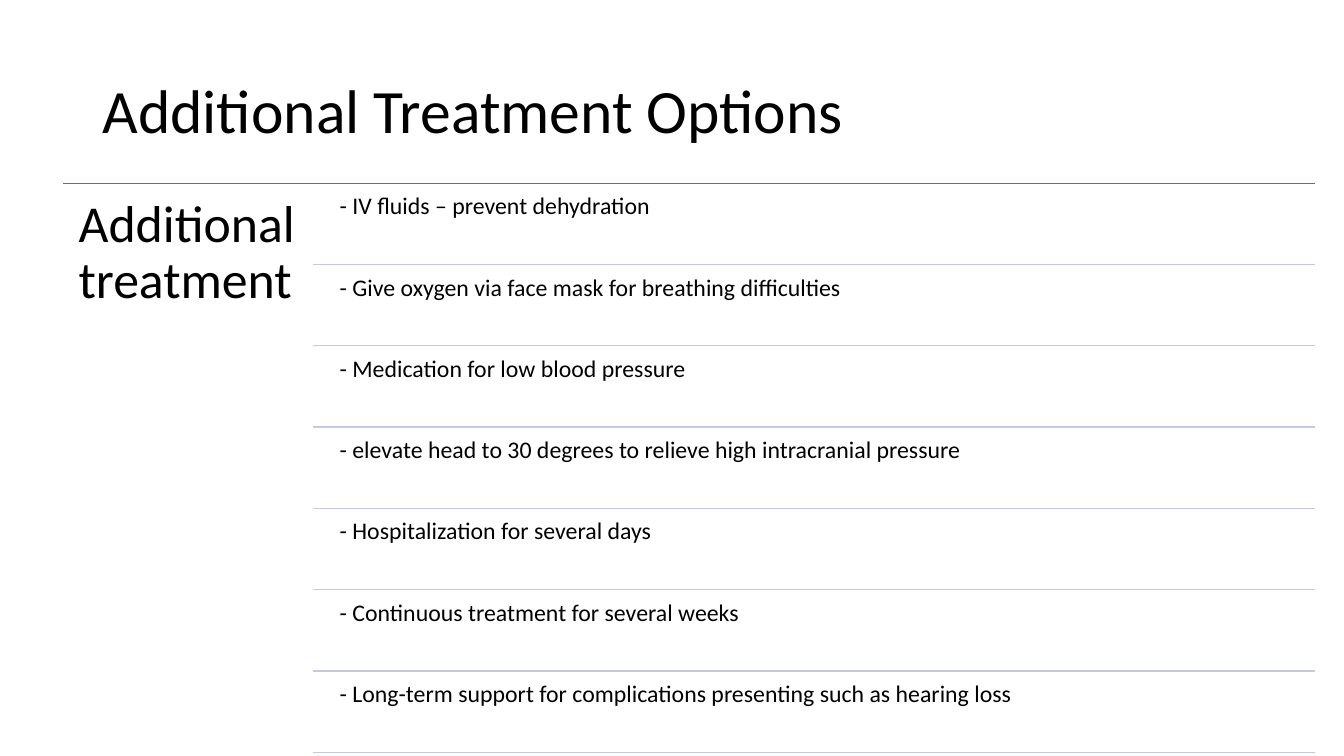
from lxml import etree
from pptx import Presentation
from pptx import util as u
from pptx.dml.color import RGBColor
from pptx.enum import shapes, text
from pptx.oxml.ns import qn

PX = 3048  # EMU per px, 300 px to the inch
COLORS = {"text": "000000", "header": "4472C4", "divider": "C1C9E4"}
FONT = "Calibri"

LEFT, RIGHT, TOP = 189, 3915, 545
ROW_LEFT, ROW_PITCH = 933, 242
TREATMENTS = [
    "IV fluids – prevent dehydration",
    "Give oxygen via face mask for breathing difficulties",
    "Medication for low blood pressure",
    "elevate head to 30 degrees to relieve high intracranial pressure",
    "Hospitalization for several days",
    "Continuous treatment for several weeks",
    "Long-term support for complications presenting such as hearing loss",
]


def px(n):
    return u.Emu(n * PX)


def add_text(s, content, x, y, w, h, size, inset_x, inset_y,
             anchor=text.MSO_ANCHOR.TOP):
    sp = s.shapes.add_textbox(px(x), px(y), px(w), px(h))
    tf = sp.text_frame
    tf.word_wrap = True
    tf.vertical_anchor = anchor
    tf.margin_left = tf.margin_right = px(inset_x)
    tf.margin_top = tf.margin_bottom = px(inset_y)
    p = tf.paragraphs[0]
    p.text = content
    p.line_spacing = 0.9
    p.font.name = FONT
    p.font.size = u.Pt(size)
    p.font.color.rgb = RGBColor.from_string(COLORS["text"])


def add_rule(s, x, y, color, width):
    ln = s.shapes.add_connector(shapes.MSO_CONNECTOR.STRAIGHT,
                                px(x), px(y), px(RIGHT), px(y))
    ln.line.color.rgb = RGBColor.from_string(COLORS[color])
    ln.line.width = u.Pt(width)
    etree.SubElement(ln._element.spPr, qn("a:effectLst"))


def main():
    prs = Presentation()
    prs.slide_width, prs.slide_height = px(4000), px(2250)
    s = prs.slides.add_slide(prs.slide_layouts[6])

    # Title
    add_text(s, "Additional Treatment Options", 276, 120, 3450, 435, 44,
             30, 15, text.MSO_ANCHOR.MIDDLE)

    # Heading column
    add_rule(s, LEFT, TOP, "header", 0.5)
    add_text(s, "Additional treatment", LEFT, TOP, 744, 1704, 37, 45, 45)

    # Treatment rows, each closed by a divider
    for i, treatment in enumerate(TREATMENTS):
        y = TOP + 12 + i * ROW_PITCH
        add_text(s, f"- {treatment}", 990, y, 2925, 231, 17, 21, 21)
        add_rule(s, ROW_LEFT, y + 230, "divider", 1)

    prs.save("out.pptx")


if __name__ == "__main__":
    main()
